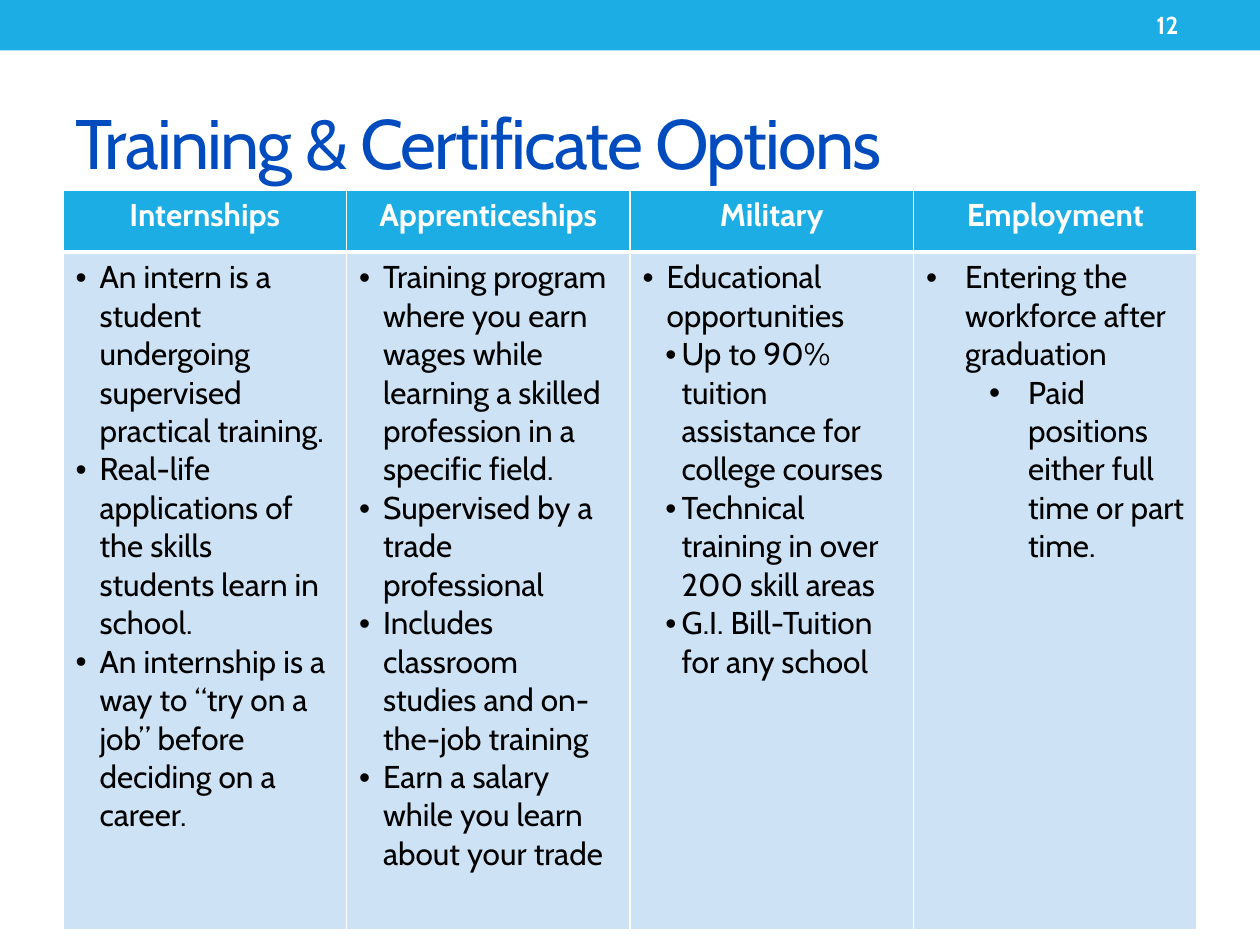
from dataclasses import dataclass

from lxml import etree
from pptx import Presentation
from pptx.dml.color import RGBColor
from pptx.enum.shapes import MSO_SHAPE
from pptx.enum.text import MSO_ANCHOR, MSO_AUTO_SIZE, PP_ALIGN
from pptx.oxml.ns import qn
from pptx.util import Inches, Pt

RECTANGLE = MSO_SHAPE.RECTANGLE
MIDDLE = MSO_ANCHOR.MIDDLE
NO_AUTOFIT = MSO_AUTO_SIZE.NONE
LEFT, CENTER = PP_ALIGN.LEFT, PP_ALIGN.CENTER
TITLE_ONLY = 5


@dataclass(frozen=True)
class Theme:
    """Colours, font and type sizes of the slide."""
    font: str = "Cabin"
    accent: str = "1CADE4"
    title: str = "004CBF"
    cell: str = "CDE3F5"
    white: str = "FFFFFF"
    black: str = "000000"
    title_size: int = 40
    table_size: int = 18
    number_size: int = 14
    thin: int = 1
    thick: int = 3


THEME = Theme()
WIDE_INDENTS = [(0.31, 0.31), (0.81, 0.31)]
TIGHT_INDENTS = [(0.19, 0.19), (0.31, 0.13)]

OPTIONS = [
    ("Internships", TIGHT_INDENTS, [
        (0, "An intern is a student undergoing supervised practical training."),
        (0, "Real-life applications of the skills students learn in school."),
        (0, "An internship is a way to “try on a job” before deciding on a career."),
    ]),
    ("Apprenticeships", TIGHT_INDENTS, [
        (0, "Training program where you earn wages while learning a skilled "
            "profession in a specific field."),
        (0, "Supervised by a trade professional"),
        (0, "Includes classroom studies and on-the-job training"),
        (0, "Earn a salary while you learn about your trade"),
    ]),
    ("Military", TIGHT_INDENTS, [
        (0, "Educational opportunities"),
        (1, "Up to 90% tuition assistance for college courses"),
        (1, "Technical training in over 200 skill areas"),
        (1, "G.I. Bill-Tuition for any school"),
    ]),
    ("Employment", WIDE_INDENTS, [
        (0, "Entering the workforce after graduation"),
        (1, "Paid positions either full time or part time."),
    ]),
]


def format_runs(paragraph, size, color, bold=False):
    """Give every run of a paragraph its font, size and colour."""
    for run in paragraph.runs:
        run.font.name = THEME.font
        run.font.size = Pt(size)
        run.font.bold = bold
        run.font.color.rgb = RGBColor.from_string(color)


def set_bullet(paragraph, level, margin, hanging):
    """Turn a paragraph into a bullet with a hanging indent."""
    paragraph.level = level
    properties = paragraph._p.get_or_add_pPr()
    properties.set("marL", str(Inches(margin)))
    properties.set("indent", str(-Inches(hanging)))
    etree.SubElement(properties, qn("a:buFont"), typeface="Arial")
    etree.SubElement(properties, qn("a:buChar"), char="•")


def style_cell(cell, color, top, bottom):
    """Fill a cell and draw its white borders."""
    cell.fill.solid()
    cell.fill.fore_color.rgb = RGBColor.from_string(color)
    properties = cell._tc.get_or_add_tcPr()
    sides = [("L", THEME.thin), ("R", THEME.thin), ("T", top), ("B", bottom)]
    for index, (side, width) in enumerate(sides):
        line = etree.Element(qn(f"a:ln{side}"), w=str(Pt(width)))
        fill = etree.SubElement(line, qn("a:solidFill"))
        etree.SubElement(fill, qn("a:srgbClr"), val=THEME.white)
        properties.insert(index, line)


def add_band(slide, left, top, width, height):
    """Draw the coloured band along the top edge."""
    band = slide.shapes.add_shape(RECTANGLE, left, top, width, height)
    band.shadow.inherit = False
    band.fill.solid()
    band.fill.fore_color.rgb = RGBColor.from_string(THEME.accent)
    band.line.fill.background()


def add_title(slide, text, left, top, width, height):
    """Place and format the title placeholder."""
    title = slide.shapes.title
    title.left, title.top, title.width, title.height = left, top, width, height
    frame = title.text_frame
    frame.text = text
    frame.auto_size = NO_AUTOFIT
    frame.vertical_anchor = MIDDLE
    paragraph = frame.paragraphs[0]
    paragraph.alignment = LEFT
    format_runs(paragraph, THEME.title_size, THEME.title)
    paragraph.runs[0].font._element.set("spc", "-100")


def add_options_table(slide, left, top, width, header_height, body_height):
    """Build the table with one column for each option."""
    table = slide.shapes.add_table(
        2, len(OPTIONS), left, top, width, header_height + body_height).table
    table.rows[0].height, table.rows[1].height = header_height, body_height
    for column, (heading, indents, items) in enumerate(OPTIONS):
        header, body = table.cell(0, column), table.cell(1, column)
        style_cell(header, THEME.accent, THEME.thin, THEME.thick)
        style_cell(body, THEME.cell, THEME.thick, THEME.thin)
        header.text_frame.text = heading
        paragraph = header.text_frame.paragraphs[0]
        paragraph.alignment = CENTER
        format_runs(paragraph, THEME.table_size, THEME.white, bold=True)
        body.text_frame.text = "\n".join(text for _, text in items)
        for paragraph, (level, _) in zip(body.text_frame.paragraphs, items):
            set_bullet(paragraph, level, *indents[level])
            format_runs(paragraph, THEME.table_size, THEME.black)


def add_slide_number(slide, text, left, top, width, height):
    """Write the slide number on the band."""
    frame = slide.shapes.add_textbox(left, top, width, height).text_frame
    frame.text = text
    frame.word_wrap = True
    frame.vertical_anchor = MIDDLE
    format_runs(frame.paragraphs[0], THEME.number_size, THEME.white, bold=True)


def main():
    """Build the slide and save it."""
    presentation = Presentation()
    presentation.slide_width = Inches(10)
    presentation.slide_height = Inches(7.5)
    slide = presentation.slides.add_slide(presentation.slide_layouts[TITLE_ONLY])
    add_band(slide, 0, 0, presentation.slide_width, Inches(0.4))
    add_title(slide, "Training & Certificate Options",
              Inches(0.5), Inches(0.58), Inches(9), Inches(1.08))
    add_options_table(slide, Inches(0.5), Inches(1.51), Inches(9),
                      Inches(0.49), Inches(5.38))
    add_slide_number(slide, "12", Inches(9.08), Inches(0.02),
                     Inches(0.42), Inches(0.35))
    presentation.save("out.pptx")


if __name__ == "__main__":
    main()
